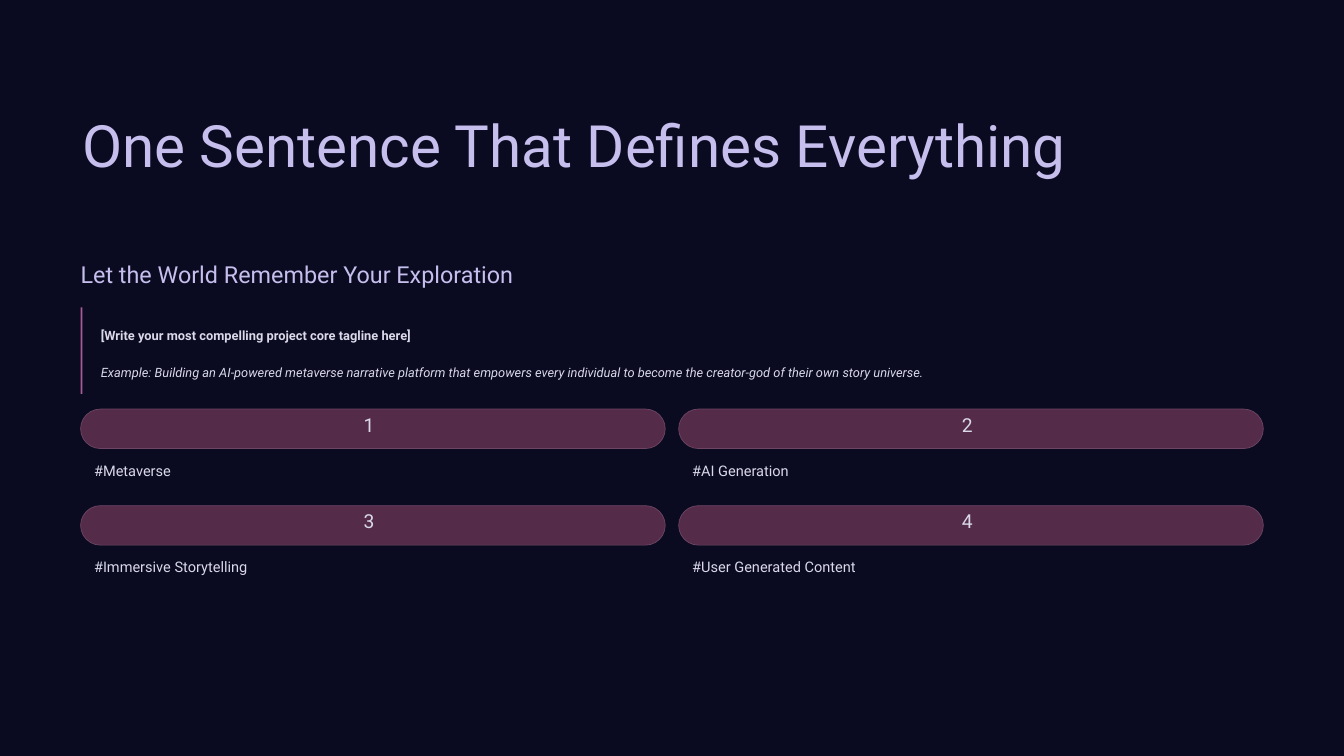
import pptx
import pptx.dml.color
import pptx.enum.shapes
import pptx.enum.text
import pptx.util
from pptx.util import Inches

FONT = "Roboto"
BACKGROUND = "0A0B21"
LAVENDER = "C6BFEE"
PALE = "DAD8E9"
ACCENT = "A95B95"
PILL_FILL = "542C49"
PILL_LINE = "6D4562"

LEFT = 0.96
COLUMN_STEP = 7.12
ROW_TOP = 4.87
ROW_STEP = 1.15
TAGS = ["#Metaverse", "#AI Generation", "#Immersive Storytelling", "#User Generated Content"]


def color(value):
    """Turn a hex string into a colour."""
    return pptx.dml.color.RGBColor.from_string(value)


def write_text(shape, text, size, line_spacing, text_color=PALE, bold=False, italic=False):
    """Write one formatted paragraph into a shape without margins."""
    frame = shape.text_frame
    frame.auto_size = pptx.enum.text.MSO_AUTO_SIZE.NONE
    frame.word_wrap = True
    frame.vertical_anchor = pptx.enum.text.MSO_ANCHOR.TOP
    frame.margin_left = frame.margin_right = frame.margin_top = frame.margin_bottom = 0
    paragraph = frame.paragraphs[0]
    paragraph.alignment = pptx.enum.text.PP_ALIGN.LEFT
    paragraph.line_spacing = pptx.util.Pt(line_spacing)
    run = paragraph.add_run()
    run.text = text
    run.font.name = FONT
    run.font.size = pptx.util.Pt(size)
    run.font.bold = bold
    run.font.italic = italic
    run.font.color.rgb = color(text_color)


def set_title(slide, text):
    """Place and format the title placeholder."""
    title = slide.shapes.title
    title.left, title.top = Inches(0.98), Inches(1.26)
    title.width, title.height = Inches(13.22), Inches(0.87)
    write_text(title, text, size=50, line_spacing=62.5, text_color=LAVENDER)


def add_text(slide, text, left, top, width, height, **text_format):
    """Add a text box with one formatted paragraph."""
    box = slide.shapes.add_textbox(Inches(left), Inches(top), Inches(width), Inches(height))
    write_text(box, text, **text_format)


def add_block(slide, kind, left, top, width, height, fill):
    """Add a filled preset shape without line or shadow."""
    shape = slide.shapes.add_shape(kind, Inches(left), Inches(top), Inches(width), Inches(height))
    shape.shadow.inherit = False
    shape.fill.solid()
    shape.fill.fore_color.rgb = color(fill)
    shape.line.fill.background()
    return shape


def add_tag(slide, number, tag, left, top):
    """Add a numbered pill with its hashtag below."""
    kind = pptx.enum.shapes.MSO_SHAPE.ROUNDED_RECTANGLE
    pill = add_block(slide, kind, left, top, 6.96, 0.47, PILL_FILL)
    pill.adjustments[0] = 0.5
    pill.line.color.rgb = color(PILL_LINE)
    pill.line.width = pptx.util.Pt(0.6)
    add_text(slide, str(number), left + 3.37, top + 0.09, 0.23, 0.29, size=16.5, line_spacing=16.5)
    add_text(slide, tag, left + 0.16, top + 0.62, 2.21, 0.22, size=12.5, line_spacing=15.5)


def main():
    """Build the tagline slide and save it."""
    presentation = pptx.Presentation()
    presentation.slide_width = Inches(16)
    presentation.slide_height = Inches(9)
    slide = presentation.slides.add_slide(presentation.slide_layouts.get_by_name("Title Only"))
    slide.background.fill.solid()
    slide.background.fill.fore_color.rgb = color(BACKGROUND)

    set_title(slide, "One Sentence That Defines Everything")
    add_text(slide, "Let the World Remember Your Exploration", LEFT, 3.08, 5.78, 0.35,
             size=20, line_spacing=25, text_color=LAVENDER)
    add_text(slide, "[Write your most compelling project core tagline here]",
             1.2, 3.84, 13.84, 0.25, size=11, line_spacing=18, bold=True)
    add_text(slide, "Example: Building an AI-powered metaverse narrative platform that empowers "
             "every individual to become the creator-god of their own story universe.",
             1.2, 4.27, 13.84, 0.25, size=11, line_spacing=18, italic=True)
    add_block(slide, pptx.enum.shapes.MSO_SHAPE.RECTANGLE, LEFT, 3.66, 0.02, 1.03, ACCENT)

    for index, tag in enumerate(TAGS):
        row, column = divmod(index, 2)
        add_tag(slide, index + 1, tag, LEFT + column * COLUMN_STEP, ROW_TOP + row * ROW_STEP)

    presentation.save("out.pptx")


if __name__ == "__main__":
    main()
